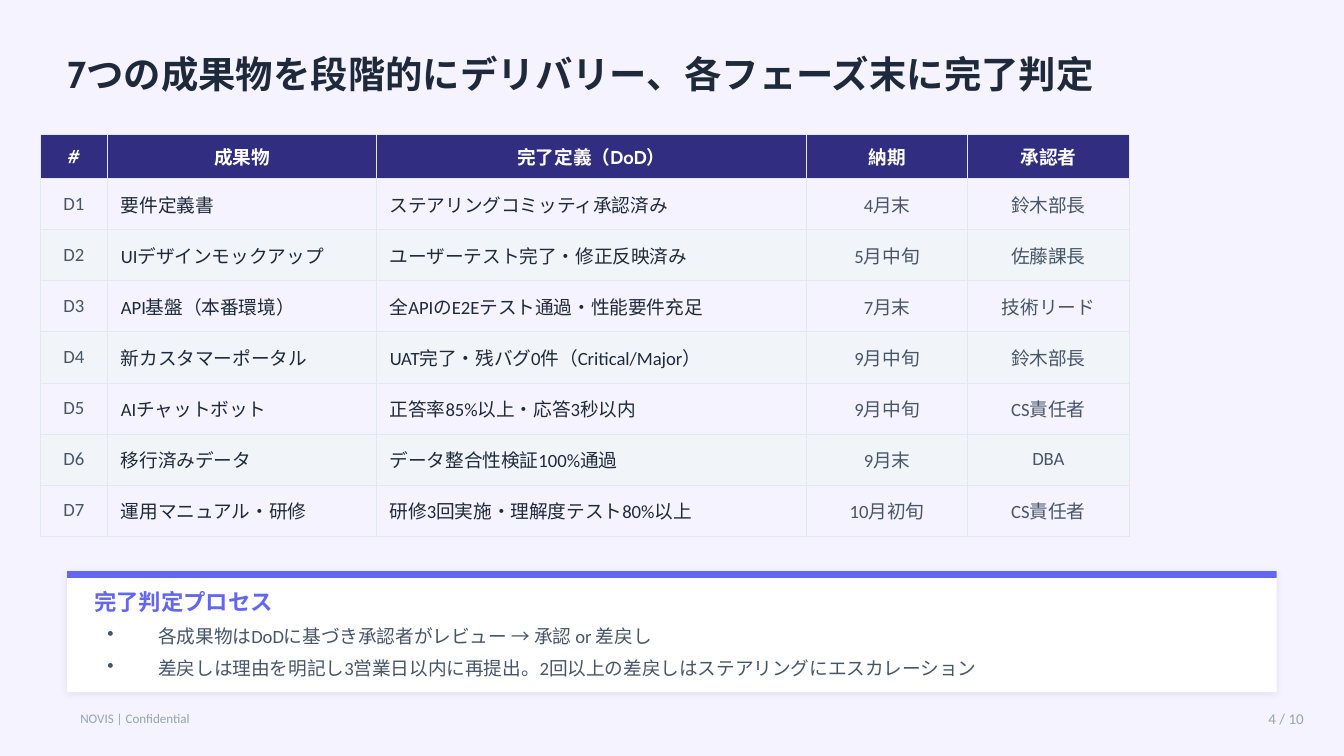
from pptx import Presentation
from pptx.dml.color import RGBColor
from pptx.enum.shapes import MSO_SHAPE
from pptx.enum.text import MSO_ANCHOR, MSO_AUTO_SIZE, PP_ALIGN
from pptx.oxml import parse_xml
from pptx.oxml.ns import nsdecls
from pptx.util import Pt

EMU_PER_PX = 4572
HEADING_FONT = "Cabin"
BODY_FONT = "Calibri"
COLORS = {
    "background": "F5F3FF",
    "ink": "1E293B",
    "body": "475569",
    "muted": "94A3B8",
    "accent": "6366F1",
    "header": "312E81",
    "stripe": "F1F5F9",
    "border": "E2E8F0",
    "white": "FFFFFF",
    "black": "000000",
}
COLUMN_WIDTHS = [100, 400, 640, 240, 240]
HEADER_HEIGHT = 66
ROW_HEIGHT = 76
HEADERS = ["#", "成果物", "完了定義（DoD）", "納期", "承認者"]
DELIVERABLES = [
    ["要件定義書", "ステアリングコミッティ承認済み", "4月末", "鈴木部長"],
    ["UIデザインモックアップ", "ユーザーテスト完了・修正反映済み", "5月中旬", "佐藤課長"],
    ["API基盤（本番環境）", "全APIのE2Eテスト通過・性能要件充足", "7月末", "技術リード"],
    ["新カスタマーポータル", "UAT完了・残バグ0件（Critical/Major）", "9月中旬", "鈴木部長"],
    ["AIチャットボット", "正答率85%以上・応答3秒以内", "9月中旬", "CS責任者"],
    ["移行済みデータ", "データ整合性検証100%通過", "9月末", "DBA"],
    ["運用マニュアル・研修", "研修3回実施・理解度テスト80%以上", "10月初旬", "CS責任者"],
]
PROCESS_STEPS = [
    "各成果物はDoDに基づき承認者がレビュー → 承認 or 差戻し",
    "差戻しは理由を明記し3営業日以内に再提出。2回以上の差戻しはステアリングにエスカレーション",
]


def px(length):
    return length * EMU_PER_PX


def rgb(name):
    return RGBColor.from_string(COLORS[name])


def write(frame, *lines, size=10, font=BODY_FONT, color="body", bold=False,
          align=PP_ALIGN.LEFT, bullet=False):
    for index, line in enumerate(lines):
        para = frame.paragraphs[0] if index == 0 else frame.add_paragraph()
        para.alignment = align
        if bullet:
            properties = para._p.get_or_add_pPr()
            properties.set("marL", str(px(76)))
            properties.set("indent", str(px(-76)))
            para.space_after = Pt(5)
            properties.append(parse_xml(f'<a:buChar {nsdecls("a")} char="•"/>'))
        span = para.add_run()
        span.text = line
        span.font.size = Pt(size)
        span.font.name = font
        span.font.bold = bold
        span.font.color.rgb = rgb(color)


def prepare_frame(box, inset):
    frame = box.text_frame
    frame.word_wrap = True
    frame.auto_size = MSO_AUTO_SIZE.NONE
    frame.vertical_anchor = MSO_ANCHOR.MIDDLE
    if not inset:
        frame.margin_left = frame.margin_right = 0
        frame.margin_top = frame.margin_bottom = 0
    return frame


def add_title(page, text):
    title = page.shapes.title
    title.left, title.top, title.width, title.height = map(px, (100, 60, 1800, 100))
    write(prepare_frame(title, False), text, size=20, font=HEADING_FONT,
          color="ink", bold=True)


def add_text(page, bounds, *lines, inset=True, **style):
    box = page.shapes.add_textbox(*map(px, bounds))
    write(prepare_frame(box, inset), *lines, **style)


def add_panel(page, bounds, color):
    panel = page.shapes.add_shape(MSO_SHAPE.RECTANGLE, *map(px, bounds))
    panel.shadow.inherit = False
    panel.fill.solid()
    panel.fill.fore_color.rgb = rgb(color)
    panel.line.fill.background()
    return panel


def add_soft_shadow(panel):
    effects = panel._element.spPr.find("{*}effectLst")
    effects.append(parse_xml(
        f'<a:outerShdw {nsdecls("a")} blurRad="{Pt(4)}" dist="{Pt(1)}" '
        f'dir="8100000" algn="bl" rotWithShape="0">'
        f'<a:srgbClr val="{COLORS["black"]}"><a:alpha val="8000"/></a:srgbClr>'
        '</a:outerShdw>'))


def format_cell(cell, text, fill=None, **style):
    properties = cell._tc.get_or_add_tcPr()
    for side in ("lnL", "lnR", "lnT", "lnB"):
        properties.append(parse_xml(
            f'<a:{side} {nsdecls("a")} w="{Pt(0.5)}"><a:solidFill>'
            f'<a:srgbClr val="{COLORS["border"]}"/></a:solidFill></a:{side}>'))
    if fill:
        cell.fill.solid()
        cell.fill.fore_color.rgb = rgb(fill)
    else:
        cell.fill.background()
    cell.vertical_anchor = MSO_ANCHOR.MIDDLE
    write(cell.text_frame, text, **style)


def add_deliverables(page):
    height = HEADER_HEIGHT + ROW_HEIGHT * len(DELIVERABLES)
    bounds = (60, 200, sum(COLUMN_WIDTHS), height)
    table = page.shapes.add_table(len(DELIVERABLES) + 1, len(HEADERS),
                                  *map(px, bounds)).table
    table.first_row = table.horz_banding = False
    for column, width in zip(table.columns, COLUMN_WIDTHS):
        column.width = px(width)
    for index, row in enumerate(table.rows):
        row.height = px(ROW_HEIGHT if index else HEADER_HEIGHT)
    for column, header in enumerate(HEADERS):
        format_cell(table.cell(0, column), header, fill="header", font=HEADING_FONT,
                    color="white", bold=True, align=PP_ALIGN.CENTER)
    for number, details in enumerate(DELIVERABLES, 1):
        fill = "stripe" if number % 2 == 0 else None
        for column, text in enumerate([f"D{number}", *details]):
            descriptive = column in (1, 2)
            format_cell(table.cell(number, column), text, fill=fill,
                        color="ink" if descriptive else "body",
                        align=PP_ALIGN.LEFT if descriptive else PP_ALIGN.CENTER)


def add_process(page):
    add_soft_shadow(add_panel(page, (100, 850, 1800, 180), "white"))
    add_panel(page, (100, 850, 1800, 10), "accent")
    add_text(page, (140, 870, 600, 50), "完了判定プロセス", inset=False, size=12,
             font=HEADING_FONT, color="accent", bold=True)
    add_text(page, (140, 920, 1720, 100), *PROCESS_STEPS, bullet=True)


def add_footer(page):
    add_text(page, (1820, 1044, 140, 50), "4 / 10", size=8, color="muted",
             align=PP_ALIGN.RIGHT)
    add_text(page, (100, 1044, 600, 50), "NOVIS | Confidential", size=7, color="muted")


def main():
    deck = Presentation()
    deck.slide_width, deck.slide_height = px(2000), px(1125)
    page = deck.slides.add_slide(deck.slide_layouts[5])
    page.background.fill.solid()
    page.background.fill.fore_color.rgb = rgb("background")
    add_title(page, "7つの成果物を段階的にデリバリー、各フェーズ末に完了判定")
    add_deliverables(page)
    add_process(page)
    add_footer(page)
    deck.save("out.pptx")


if __name__ == "__main__":
    main()
